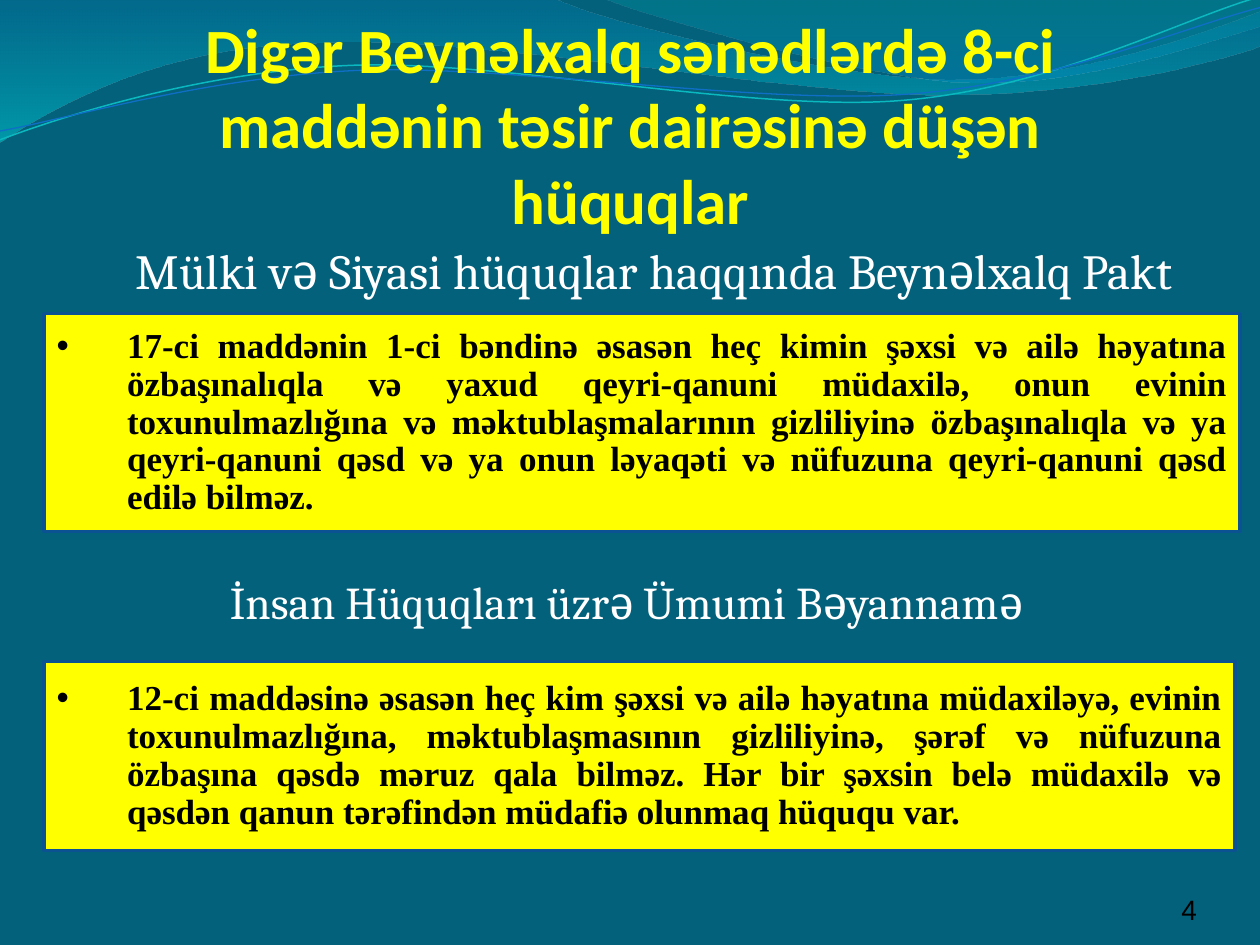
from lxml import etree
from pptx import Presentation
from pptx import util as u
from pptx.dml.color import RGBColor
from pptx.enum import shapes, text
from pptx.oxml.ns import qn

WIDE, HIGH = 10, 7.5
YELLOW, WHITE, BLACK, EDGE = "FFFF00", "FFFFFF", "000000", "0B5292"

# Waves: a start point, then points (straight) or triples of points (curves).
BANDS = [
    ([(0, -0.01), (4.4, -0.01),
      ((4.76, 0.17), (6.64, 0.63), (7.58, 0.63)),
      ((8.53, 0.63), (9.58, 0.26), (10, 0.09)), (10.01, 0.36),
      ((9.83, 0.44), (8.7, 0.76), (7.46, 0.75)),
      ((6.22, 0.75), (3.82, 0.28), (2.57, 0.34)),
      ((1.29, 0.35), (0.46, 0.83), (-0.01, 1.13))],
     [("0074A1", 45), ("00C6CF", 55)]),
    ([(4.79, -0.01),
      ((5.09, 0.11), (6.82, 0.62), (7.69, 0.65)),
      ((8.56, 0.69), (9.61, 0.32), (10, 0.21)), (10, 0)],
     [("00A1A9", 30), ("008BBF", 45)]),
]
LINES = [
    ([(0, 1.11), ((0.48, 0.93), (1.58, 0.57), (2.77, 0.52)),
      ((3.95, 0.47), (5.93, 0.89), (7.13, 0.8)),
      ((8.33, 0.71), (9.38, 0.15), (9.98, -0.02))], "0AB8BF", 0.85),
    ([(0, 1.04), ((0.47, 0.96), (1.64, 0.61), (2.83, 0.56)),
      ((4.03, 0.51), (5.97, 0.83), (7.17, 0.75)),
      ((8.36, 0.67), (9.41, 0.21), (10, 0.06))], "0F6FC6", 0.75),
]

TITLE = "Digər Beynəlxalq sənədlərdə 8-ci maddənin təsir dairəsinə düşən hüquqlar"
# Headings: words, size, left margin (inches), space before (points)
HEADS = [
    ("Mülki və Siyasi hüquqlar haqqında Beynəlxalq Pakt", 28, 0.43, 0),
    ("İnsan Hüquqları üzrə Ümumi Bəyannamə", 26, 0, 160),
]
# Articles: words, place
RULES = [
    ("17-ci maddənin 1-ci bəndinə əsasən heç kimin şəxsi və ailə həyatına "
     "özbaşınalıqla və yaxud qeyri-qanuni müdaxilə, onun evinin "
     "toxunulmazlığına və məktublaşmalarının gizliliyinə özbaşınalıqla və ya "
     "qeyri-qanuni qəsd və ya onun ləyaqəti və nüfuzuna qeyri-qanuni qəsd "
     "edilə bilməz.", (0.35, 2.49, 9.49, 1.73)),
    ("12-ci maddəsinə əsasən heç kim şəxsi və ailə həyatına müdaxiləyə, evinin "
     "toxunulmazlığına, məktublaşmasının gizliliyinə, şərəf və nüfuzuna "
     "özbaşına qəsdə məruz qala bilməz. Hər bir şəxsin belə müdaxilə və "
     "qəsdən qanun tərəfindən müdafiə olunmaq hüququ var.",
     (0.35, 5.25, 9.45, 1.5)),
]


def rgb(code):
    return RGBColor.from_string(code)


def wave(slide, steps, close):
    """Draw the end points as a freeform, then bend the curved segments."""
    curved = [isinstance(step[0], tuple) for step in steps]
    ends = [step[-1] if bent else step for step, bent in zip(steps, curved)]
    pts = [(u.Inches(x), u.Inches(y)) for x, y in ends]
    pen = slide.shapes.build_freeform(*pts[0])
    pen.add_line_segments(pts[1:], close=close)
    shape = pen.convert_to_shape()
    shape.shadow.inherit = False
    nodes = list(shape._element.iter(qn("a:lnTo")))
    for node, step, bent in zip(nodes, steps[1:], curved[1:]):
        if not bent:
            continue
        node.tag = qn("a:cubicBezTo")
        for i, (x, y) in enumerate(step[:2]):
            point = etree.Element(qn("a:pt"))
            point.set("x", str(u.Inches(x) - shape.left))
            point.set("y", str(u.Inches(y) - shape.top))
            node.insert(i, point)
    return shape


def shade(shape, stops):
    """Fill from top to bottom with see-through colours."""
    shape.line.fill.background()
    shape.fill.gradient()
    shape.fill.gradient_angle = 270
    for mark, pos, (code, _) in zip(shape.fill.gradient_stops, (0, 1), stops):
        mark.position = pos
        mark.color.rgb = rgb(code)
    for node, (_, alpha) in zip(shape._element.iter(qn("a:srgbClr")), stops):
        etree.SubElement(node, qn("a:alpha")).set("val", str(alpha * 1000))


def setup(shape, anchor, left=0, top=0, right=0.02, bottom=0):
    frame = shape.text_frame
    frame.word_wrap = True
    frame.vertical_anchor = text.MSO_ANCHOR[anchor]
    sides = dict(left=left, top=top, right=right, bottom=bottom)
    for side, gap in sides.items():
        setattr(frame, "margin_" + side, u.Inches(gap))
    return frame


def write(para, words, face, size, code, bold=False, align="CENTER"):
    para.alignment = text.PP_ALIGN[align]
    run = para.add_run()
    run.text = words
    for key, val in dict(name=face, size=u.Pt(size), bold=bold).items():
        setattr(run.font, key, val)
    run.font.color.rgb = rgb(code)


def indent(para, left, first=0.0):
    props = para._p.get_or_add_pPr()
    props.set("marL", str(u.Inches(left)))
    props.set("indent", str(u.Inches(first)))
    return props


def main():
    deck = Presentation()
    deck.slide_width, deck.slide_height = u.Inches(WIDE), u.Inches(HIGH)
    slide = deck.slides.add_slide(deck.slide_layouts[6])
    back = slide.background.fill
    back.solid()
    back.fore_color.rgb = rgb("04617B")

    def box(*place):
        return slide.shapes.add_textbox(*map(u.Inches, place))

    for steps, stops in BANDS:
        shade(wave(slide, steps, True), stops)
    for steps, code, width in LINES:
        line = wave(slide, steps, False)
        line.fill.background()
        line.line.color.rgb = rgb(code)
        line.line.width = u.Pt(width)

    frame = setup(box(0.78, 0.16, 8.47, 1.72), "BOTTOM")
    write(frame.paragraphs[0], TITLE, "Calibri", 36, YELLOW, bold=True)

    frame = setup(box(0.2, 1.86, 9.57, 5.88), "TOP", top=0.1, bottom=0.05)
    for i, (words, size, left, space) in enumerate(HEADS):
        para = frame.add_paragraph() if i else frame.paragraphs[0]
        write(para, words, "Cambria", size, WHITE)
        para.line_spacing = 0.9
        para.space_before = u.Pt(space)
        indent(para, left)

    for words, place in RULES:
        card = slide.shapes.add_shape(shapes.MSO_SHAPE.RECTANGLE,
                                      *map(u.Inches, place))
        card.shadow.inherit = False
        card.fill.solid()
        card.fill.fore_color.rgb = rgb(YELLOW)
        card.line.color.rgb = rgb(EDGE)
        card.line.width = u.Pt(2)
        para = setup(card, "MIDDLE", 0.1, 0.05, 0.1, 0.05).paragraphs[0]
        write(para, words, "Times New Roman", 20, BLACK, True, "JUSTIFY")
        para.line_spacing = 0.9
        props = indent(para, 0.56, -0.56)
        etree.SubElement(props, qn("a:buFont")).set("typeface", "Arial")
        etree.SubElement(props, qn("a:buChar")).set("char", "•")

    frame = setup(box(8.67, 6.95, 0.83, 0.4), "BOTTOM", right=0)
    write(frame.paragraphs[0], "4", "Arial", 16, BLACK, align="RIGHT")
    deck.save("out.pptx")


if __name__ == "__main__":
    main()
